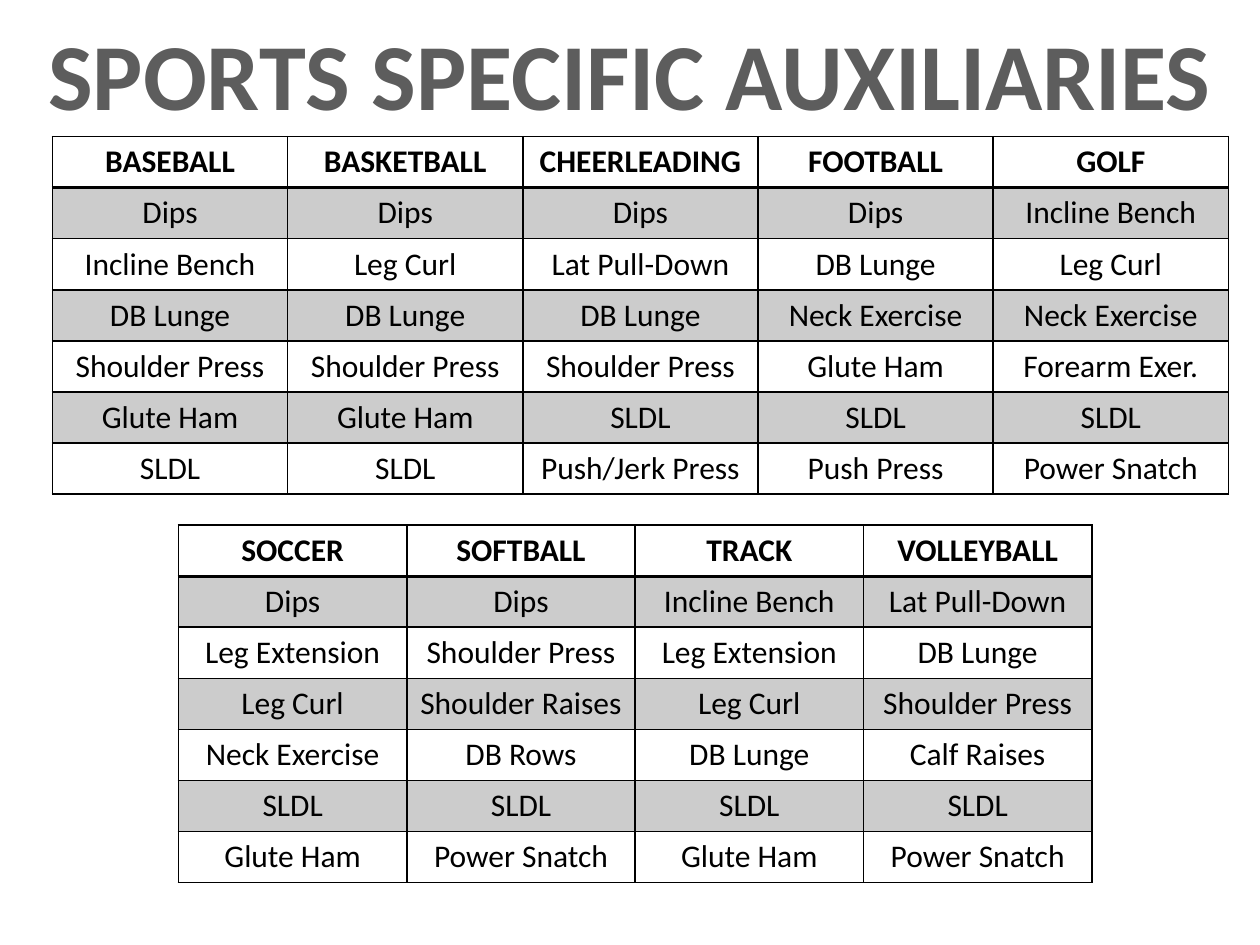
import lxml.etree
import pptx
import pptx.dml.color
import pptx.enum.text
import pptx.oxml.ns
import pptx.util

Pt = pptx.util.Pt
BLACK = pptx.dml.color.RGBColor(0x00, 0x00, 0x00)
TITLE_GRAY = pptx.dml.color.RGBColor(0x5D, 0x5D, 0x5D)
FONT = "Calibri"
BAND_OPACITY = 20

FIRST_SPORTS = {
    "BASEBALL": ["Dips", "Incline Bench", "DB Lunge", "Shoulder Press", "Glute Ham", "SLDL"],
    "BASKETBALL": ["Dips", "Leg Curl", "DB Lunge", "Shoulder Press", "Glute Ham", "SLDL"],
    "CHEERLEADING": ["Dips", "Lat Pull-Down", "DB Lunge", "Shoulder Press", "SLDL", "Push/Jerk Press"],
    "FOOTBALL": ["Dips", "DB Lunge", "Neck Exercise", "Glute Ham", "SLDL", "Push Press"],
    "GOLF": ["Incline Bench", "Leg Curl", "Neck Exercise", "Forearm Exer.", "SLDL", "Power Snatch"],
}
SECOND_SPORTS = {
    "SOCCER": ["Dips", "Leg Extension", "Leg Curl", "Neck Exercise", "SLDL", "Glute Ham"],
    "SOFTBALL": ["Dips", "Shoulder Press", "Shoulder Raises", "DB Rows", "SLDL", "Power Snatch"],
    "TRACK": ["Incline Bench", "Leg Extension", "Leg Curl", "DB Lunge", "SLDL", "Glute Ham"],
    "VOLLEYBALL": ["Lat Pull-Down", "DB Lunge", "Shoulder Press", "Calf Raises", "SLDL", "Power Snatch"],
}


def add_child(parent, tag, **attributes):
    return lxml.etree.SubElement(parent, pptx.oxml.ns.qn(tag), attributes)


def format_paragraph(paragraph, size, color, bold):
    paragraph.alignment = pptx.enum.text.PP_ALIGN.CENTER
    paragraph.font.name = FONT
    paragraph.font.size = Pt(size)
    paragraph.font.bold = bold
    paragraph.font.color.rgb = color


def set_borders(cell, row):
    properties = cell._tc.get_or_add_tcPr()
    widths = {
        "a:lnL": 1,
        "a:lnR": 1,
        "a:lnT": 2 if row == 1 else 1,
        "a:lnB": 2 if row == 0 else 1,
    }
    for tag, width in widths.items():
        line = add_child(properties, tag, w=str(Pt(width)))
        add_child(add_child(line, "a:solidFill"), "a:srgbClr", val=str(BLACK))


def set_band(cell, shaded):
    if not shaded:
        cell.fill.background()
        return
    cell.fill.solid()
    cell.fill.fore_color.rgb = BLACK
    color = cell._tc.tcPr.find(".//" + pptx.oxml.ns.qn("a:solidFill") + "[last()]")
    fill = cell._tc.tcPr.find(pptx.oxml.ns.qn("a:solidFill"))
    add_child(fill[0], "a:alpha", val=str(BAND_OPACITY * 1000))


def add_title(slide, left, top, width, height):
    title = slide.shapes.title
    title.left, title.top, title.width, title.height = map(Pt, (left, top, width, height))
    frame = title.text_frame
    frame.text = "SPORTS SPECIFIC AUXILIARIES"
    frame.word_wrap = False
    frame.auto_size = pptx.enum.text.MSO_AUTO_SIZE.NONE
    frame.vertical_anchor = pptx.enum.text.MSO_ANCHOR.MIDDLE
    format_paragraph(frame.paragraphs[0], 54, TITLE_GRAY, True)


def add_sports_table(slide, sports, left, top, width, height):
    columns = [[sport, *exercises] for sport, exercises in sports.items()]
    row_count = len(columns[0])
    table = slide.shapes.add_table(
        row_count, len(columns), Pt(left), Pt(top), Pt(width), Pt(height)
    ).table
    table.horz_banding = False
    for column, texts in enumerate(columns):
        table.columns[column].width = Pt(width / len(columns))
        for row, text in enumerate(texts):
            table.rows[row].height = Pt(height / row_count)
            cell = table.cell(row, column)
            cell.text = text
            format_paragraph(cell.text_frame.paragraphs[0], 18, BLACK, row == 0)
            set_borders(cell, row)
            set_band(cell, row % 2 == 1)


def main():
    presentation = pptx.Presentation()
    presentation.slide_width = Pt(720)
    presentation.slide_height = Pt(540)
    slide = presentation.slides.add_slide(presentation.slide_layouts[5])
    add_sports_table(slide, SECOND_SPORTS, 102, 300, 522, 204.4)
    add_sports_table(slide, FIRST_SPORTS, 30, 78, 672, 204.4)
    add_title(slide, 17, 5, 686, 73)
    presentation.save("out.pptx")


if __name__ == "__main__":
    main()
